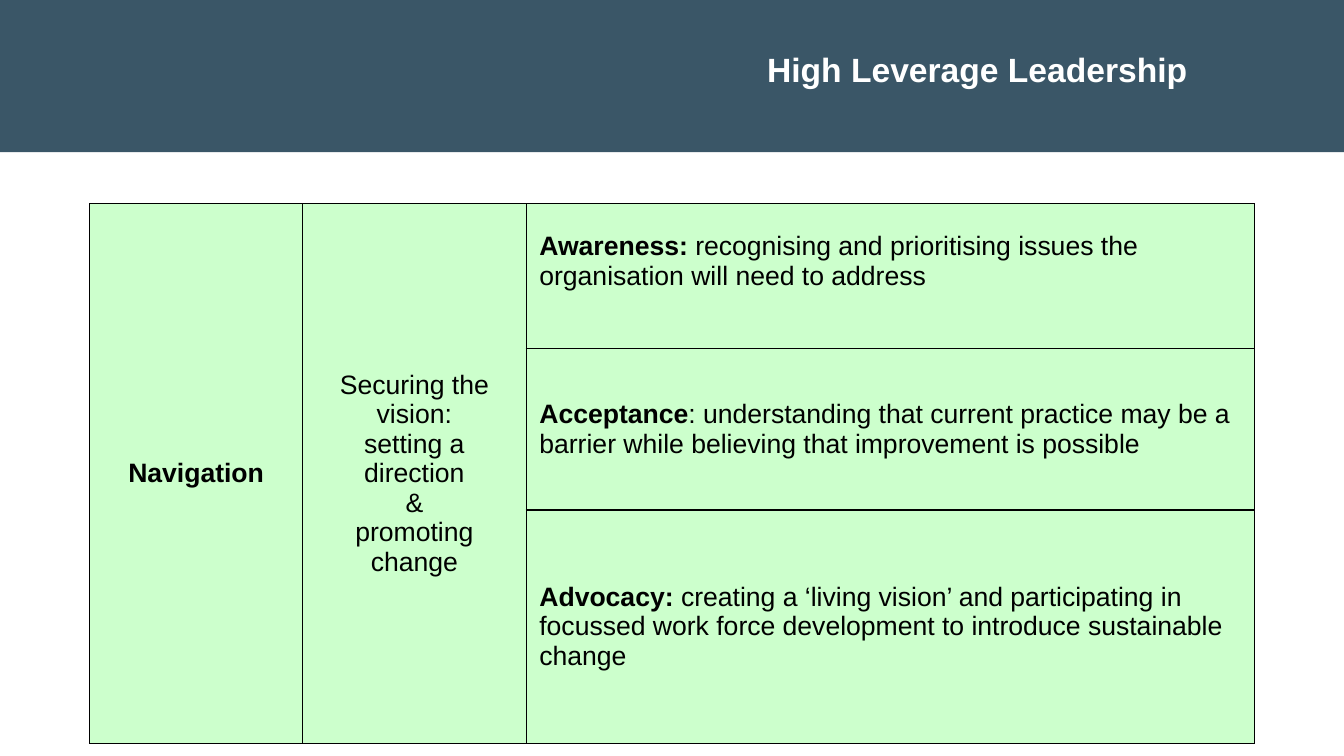
from pptx import Presentation
from pptx.dml.color import RGBColor
from pptx.enum import shapes, text
from pptx.oxml import parse_xml
from pptx.oxml.ns import nsdecls
from pptx.util import Inches, Pt

SLATE = RGBColor(0x3A, 0x56, 0x67)
MINT = RGBColor(0xCC, 0xFF, 0xCC)
BLACK = RGBColor(0, 0, 0)
WHITE = RGBColor(255, 255, 255)

COLUMN_WIDTHS = [2.11, 2.22, 7.22]
ROW_HEIGHTS = [1.44, 1.6, 2.15]
VISION_LINES = ["Securing the vision:", "setting a direction", "&", "promoting change"]
STAGES = [
    ("Awareness:", " recognising and prioritising issues the organisation will need to address"),
    ("Acceptance", ": understanding that current practice may be a barrier "
                   "while believing that improvement is possible"),
    ("Advocacy:", " creating a ‘living vision’ and participating in focussed "
                  "work force development to introduce sustainable change"),
]


def add_span(para, words, size, color, bold=False):
    span = para.add_run()
    span.text = words
    span.font.color.rgb = color
    formats = {"name": "Arial", "size": Pt(size), "bold": bold}
    for name, value in formats.items():
        setattr(span.font, name, value)


def add_header(page, left, top, width, height):
    band = page.shapes.add_shape(
        shapes.MSO_SHAPE.RECTANGLE, Inches(left), Inches(top), Inches(width), Inches(height))
    band.shadow.inherit = False
    band.fill.solid()
    band.fill.fore_color.rgb = SLATE
    band.line.fill.background()

    box = page.shapes.add_textbox(
        Inches(left + 7.51), Inches(top + 0.44), Inches(4.41), Inches(0.5))
    box.text_frame.word_wrap = False
    box.text_frame.auto_size = text.MSO_AUTO_SIZE.SHAPE_TO_FIT_TEXT
    add_span(box.text_frame.paragraphs[0], "High Leverage Leadership", 24, WHITE, True)


def style_cell(cell):
    """Give a cell its margins, black borders and mint fill."""
    formats = {
        "vertical_anchor": text.MSO_ANCHOR.MIDDLE,
        "margin_left": Inches(0.13), "margin_right": Inches(0.13),
        "margin_top": Inches(0.05), "margin_bottom": Inches(0.05),
    }
    for name, value in formats.items():
        setattr(cell, name, value)
    properties = cell._tc.get_or_add_tcPr()
    for side in ("lnL", "lnR", "lnT", "lnB"):
        properties.append(parse_xml(
            f'<a:{side} {nsdecls("a")} w="{Pt(1)}"><a:solidFill>'
            f'<a:srgbClr val="{BLACK}"/></a:solidFill></a:{side}>'))
    cell.fill.solid()
    cell.fill.fore_color.rgb = MINT


def write_cell(cell, paragraphs, align):
    """Fill a cell; each paragraph is a list of (words, bold) pairs."""
    frame = cell.text_frame
    for index, spans in enumerate(paragraphs):
        para = frame.add_paragraph() if index else frame.paragraphs[0]
        para.alignment = align
        for words, bold in spans:
            add_span(para, words, 19, BLACK, bold)


def add_navigation_table(page, left, top):
    frame = page.shapes.add_table(
        len(ROW_HEIGHTS), len(COLUMN_WIDTHS), Inches(left), Inches(top),
        Inches(sum(COLUMN_WIDTHS)), Inches(sum(ROW_HEIGHTS)))
    table = frame.table
    table.first_row = table.horz_banding = False
    for column, width in zip(table.columns, COLUMN_WIDTHS):
        column.width = Inches(width)
    for row, height in zip(table.rows, ROW_HEIGHTS):
        row.height = Inches(height)
    for cell in table.iter_cells():
        style_cell(cell)

    last = len(ROW_HEIGHTS) - 1
    for column in (0, 1):
        table.cell(0, column).merge(table.cell(last, column))
    center, start = text.PP_ALIGN.CENTER, text.PP_ALIGN.LEFT
    write_cell(table.cell(0, 0), [[("Navigation", True)]], center)
    write_cell(table.cell(0, 1), [[(line, False)] for line in VISION_LINES], center)
    for row, (term, meaning) in enumerate(STAGES):
        write_cell(table.cell(row, 2), [[(term, True), (meaning, False)]], start)
    # The first stage sits a little above the middle of its row.
    table.cell(0, 2).margin_bottom = Inches(0.35)


def main():
    deck = Presentation()
    deck.slide_width, deck.slide_height = Inches(13.33), Inches(7.5)
    page = deck.slides.add_slide(deck.slide_layouts[6])
    add_header(page, 0, 0, 13.33, 1.51)
    add_navigation_table(page, 0.89, 2.02)
    deck.save("out.pptx")


if __name__ == "__main__":
    main()
